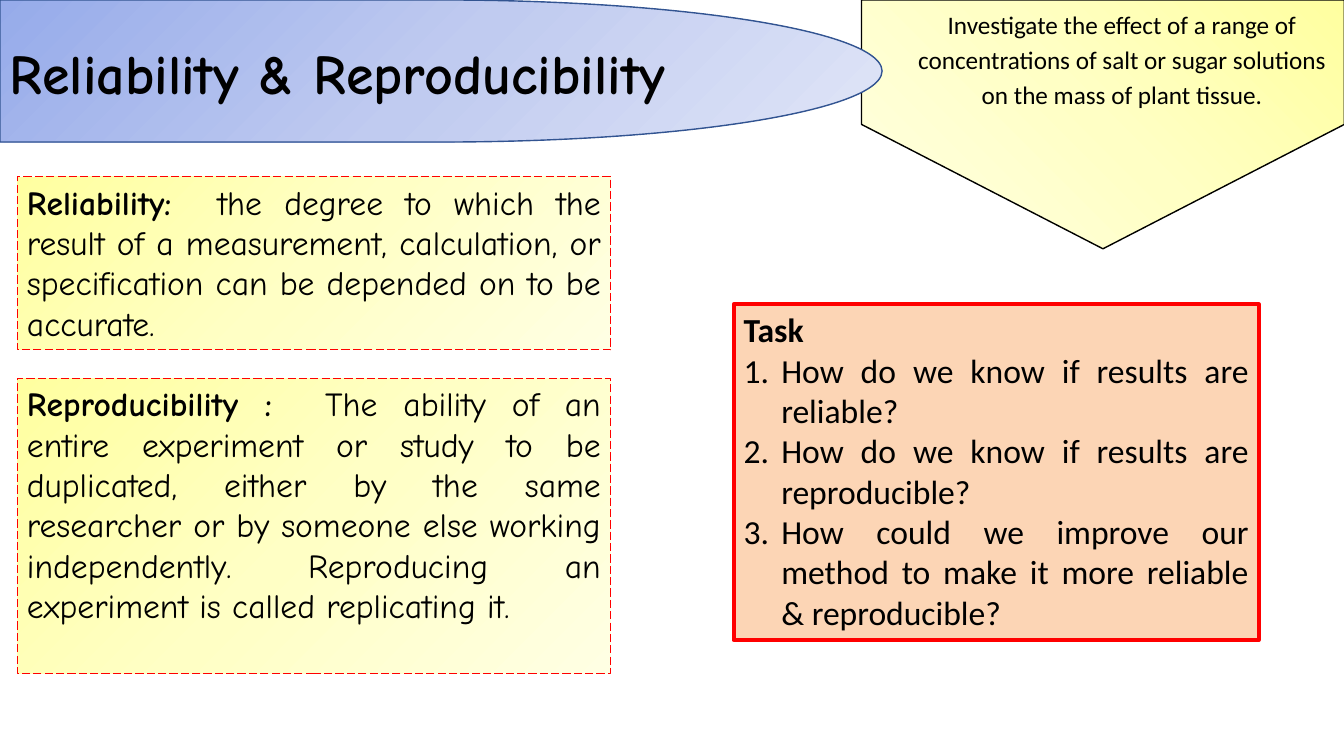
"""Build the slide on reliability and reproducibility."""
from copy import deepcopy

from lxml import etree
from pptx import Presentation
from pptx.dml.color import RGBColor
from pptx.enum.dml import MSO_LINE
from pptx.enum.shapes import MSO_SHAPE
from pptx.enum.text import MSO_ANCHOR, PP_ALIGN
from pptx.oxml.ns import qn
from pptx.util import Cm, Pt

RECTANGLE = MSO_SHAPE.RECTANGLE
PENTAGON = MSO_SHAPE.PENTAGON
DELAY = MSO_SHAPE.FLOWCHART_DELAY
LONG_DASH = MSO_LINE.LONG_DASH
TOP = MSO_ANCHOR.TOP
LEFT, CENTER, JUSTIFY = PP_ALIGN.LEFT, PP_ALIGN.CENTER, PP_ALIGN.JUSTIFY

HEADING_FONT, BODY_FONT = "Comic Neue", "Calibri"
BLACK, RED, PEACH, NAVY = "000000", "FF0000", "FCD5B5", "325491"
YELLOWS = ("FFFFA0", "FFFFC5", "FFFFE3")
BLUES = ("96ABEA", "C0CBF0", "E0E5F7")

DEFINITIONS = (
    (4.45, 4.37, "Reliability:  ",
     "the degree to which the result of a measurement, calculation, or "
     "specification can be depended on to be accurate."),
    (9.53, 7.44, "Reproducibility :  ",
     "The ability of an entire experiment or study to be duplicated, either "
     "by the same researcher or by someone else working independently. "
     "Reproducing an experiment is called replicating it."),
)
QUESTIONS = (
    "How do we know if results are reliable?",
    "How do we know if results are reproducible?",
    "How could we improve our method to make it more reliable & reproducible?",
)


def color(value):
    """Turn a hex string into a colour."""
    return RGBColor.from_string(value)


def fill_gradient(panel, shades):
    """Fill a panel with evenly spaced shades running diagonally."""
    panel.fill.gradient()
    panel.fill.gradient_angle = 315
    stop_list = panel._element.spPr.find(qn("a:gradFill")).find(qn("a:gsLst"))
    for _ in range(len(shades) - len(stop_list)):
        stop_list.append(deepcopy(stop_list[0]))
    for index, (stop, shade) in enumerate(zip(panel.fill.gradient_stops, shades)):
        stop.position = index / (len(shades) - 1)
        stop.color.rgb = color(shade)


def add_panel(slide, kind, box, shades, outline, width=1, dash=None):
    """Add an outlined shape with a solid or gradient fill."""
    panel = slide.shapes.add_shape(kind, *map(Cm, box))
    panel.shadow.inherit = False
    if isinstance(shades, str):
        panel.fill.solid()
        panel.fill.fore_color.rgb = color(shades)
    else:
        fill_gradient(panel, shades)
    panel.line.color.rgb = color(outline)
    panel.line.width = Pt(width)
    if dash:
        panel.line.dash_style = dash
    return panel


def write(paragraph, text, font=BODY_FONT, size=24, bold=False, align=JUSTIFY,
          spacing=None):
    """Append formatted text to a paragraph."""
    paragraph.alignment = align
    if spacing:
        paragraph.line_spacing = spacing
    run = paragraph.add_run()
    run.text = text
    run.font.name = font
    run.font.size = Pt(size)
    run.font.bold = bold
    run.font.color.rgb = color(BLACK)


def open_text(holder):
    """Prepare a shape for wrapped, top-aligned text."""
    frame = holder.text_frame
    frame.word_wrap = True
    frame.vertical_anchor = TOP
    return frame


def add_label(slide, box, text, **style):
    """Add a free-standing text box."""
    label = slide.shapes.add_textbox(*map(Cm, box))
    write(open_text(label).paragraphs[0], text, **style)


def add_definition(slide, top, height, term, meaning):
    """Add a dashed yellow box defining a term."""
    panel = add_panel(slide, RECTANGLE, (0.43, top, 14.96, height), YELLOWS,
                      RED, 0.75, LONG_DASH)
    paragraph = open_text(panel).paragraphs[0]
    write(paragraph, term, font=HEADING_FONT, bold=True)
    write(paragraph, meaning, font=HEADING_FONT)


def number(paragraph):
    """Make a paragraph an item of a numbered list."""
    properties = paragraph._p.get_or_add_pPr()
    indent = Cm(0.95)
    properties.set("marL", str(indent))
    properties.set("indent", str(-indent))
    etree.SubElement(properties, qn("a:buFont"), typeface="+mj-lt")
    etree.SubElement(properties, qn("a:buAutoNum"), type="arabicPeriod")


def add_task(slide):
    """Add the task box with its numbered questions."""
    panel = add_panel(slide, RECTANGLE, (18.49, 7.67, 13.23, 8.46), PEACH, RED, 3)
    frame = open_text(panel)
    write(frame.paragraphs[0], "Task", bold=True)
    for question in QUESTIONS:
        paragraph = frame.add_paragraph()
        write(paragraph, question)
        number(paragraph)


def main():
    """Build and save the slide."""
    presentation = Presentation()
    presentation.slide_width = Cm(33.87)
    presentation.slide_height = Cm(19.05)
    slide = presentation.slides.add_slide(presentation.slide_layouts[6])

    aim_banner = add_panel(slide, PENTAGON, (24.66, -2.95, 6.27, 12.17),
                           YELLOWS, BLACK)
    aim_banner.rotation = 90
    add_panel(slide, DELAY, (0, 0, 22.23, 3.58), BLUES, NAVY)
    add_label(slide, (0, 0.84, 26.7, 1.96), "Reliability & Reproducibility",
              font=HEADING_FONT, size=40, bold=True, align=LEFT)
    add_label(slide, (22.66, 0, 11.23, 2.84),
              "Investigate the effect of a range of concentrations of salt or "
              "sugar solutions on the mass of plant tissue.",
              size=18, align=CENTER, spacing=1.15)
    for definition in DEFINITIONS:
        add_definition(slide, *definition)
    add_task(slide)
    presentation.save("out.pptx")


if __name__ == "__main__":
    main()
